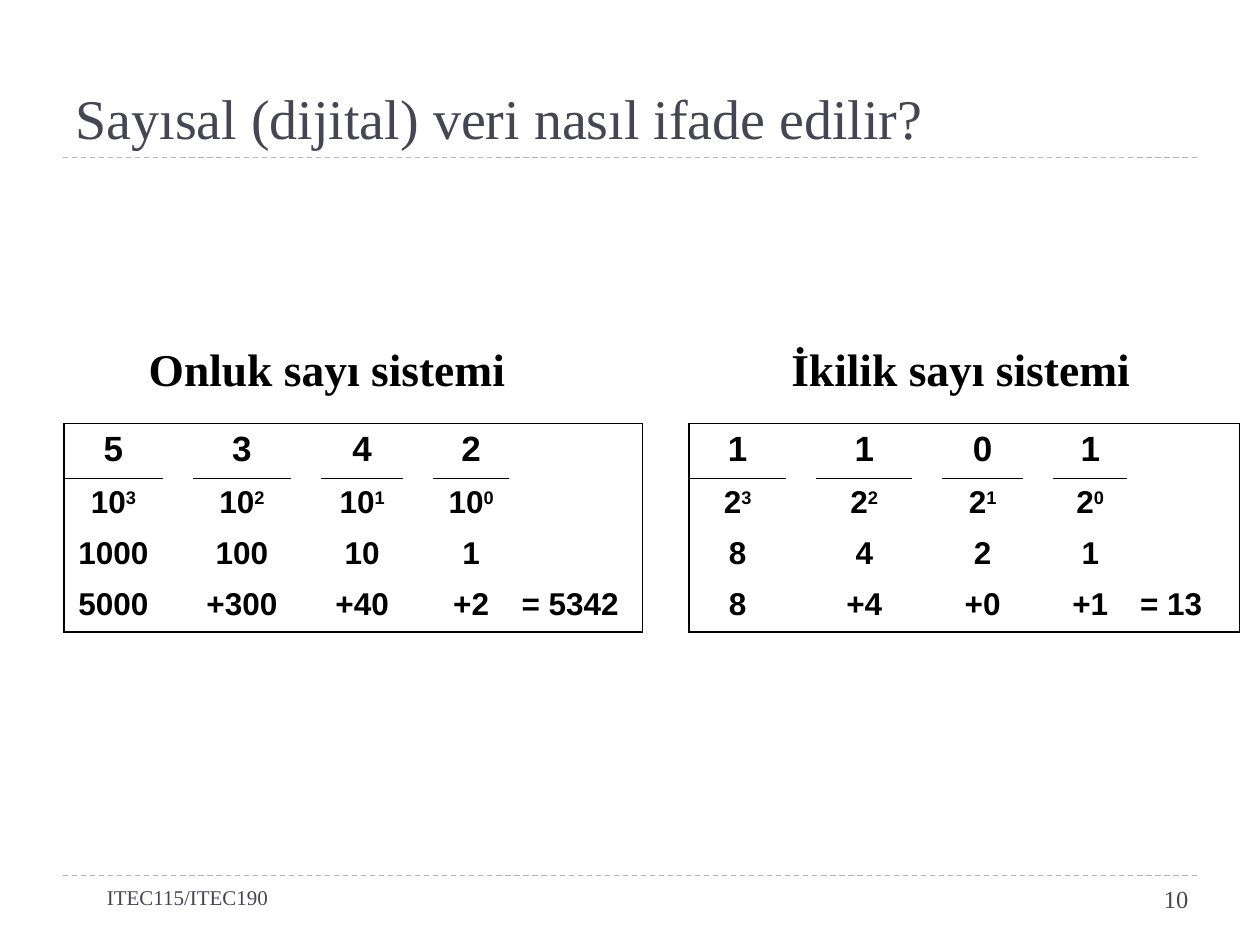
from dataclasses import dataclass

from lxml.etree import SubElement
from pptx import Presentation
from pptx.dml.color import RGBColor
from pptx.enum.dml import MSO_LINE_DASH_STYLE as Dash
from pptx.enum.shapes import MSO_CONNECTOR as Connector
from pptx.enum.text import MSO_ANCHOR as Anchor, PP_ALIGN as Align
from pptx.oxml import parse_xml
from pptx.oxml.ns import nsdecls, qn
from pptx.util import Inches, Pt

INK = "000000"
SLATE = "464653"
RULE = "9FB8CD"
SERIF = "Times New Roman"
NO_GRID_STYLE = "{2D5ABB26-0587-4C30-8999-92F81FD0307C}"
ROW_HEIGHTS = (0.44, 0.4, 0.4, 0.4)


@dataclass
class NumberSystem:
    heading: str
    heading_left: float
    left: float
    base: int
    digits: str
    column_widths: tuple[float, ...]


@dataclass
class Label:
    text: str
    left: float
    width: float
    size: int
    align: Align


SYSTEMS = (
    NumberSystem("Onluk sayı sistemi", 1.08, 0.51, 10, "5342",
                 (0.78, 0.24, 0.78, 0.24, 0.65, 0.24, 0.6, 1.06)),
    NumberSystem("İkilik sayı sistemi", 6.18, 5.47, 2, "1101",
                 (0.77, 0.24, 0.76, 0.24, 0.64, 0.23, 0.59, 0.89)),
)
FOOTERS = (
    Label("ITEC115/ITEC190", 0.75, 8, 12, Align.LEFT),
    Label("10", 9.02, 0.51, 14, Align.RIGHT),
)


def color(value: str) -> RGBColor:
    return RGBColor.from_string(value)


def apply(target, formats: dict) -> None:
    for attribute, value in formats.items():
        setattr(target, attribute, value)


def write(paragraph, text: str, size: int, ink: str, face: str = SERIF, bold: bool = False):
    run = paragraph.add_run()
    run.text = text
    apply(run.font, {"size": Pt(size), "name": face, "bold": bold})
    run.font.color.rgb = color(ink)
    return run


def place(shape, left: float, top: float, width: float, height: float) -> None:
    apply(shape, {"left": Inches(left), "top": Inches(top),
                  "width": Inches(width), "height": Inches(height)})


def draw_rule(slide, top: float) -> None:
    rule = slide.shapes.add_connector(
        Connector.STRAIGHT, Inches(0.5), Inches(top), Inches(9.5), Inches(top))
    apply(rule.line, {"width": Pt(0.75), "dash_style": Dash.DASH})
    rule.line.color.rgb = color(RULE)
    SubElement(rule._element.spPr, qn("a:effectLst"))


def draw_label(slide, label: Label) -> None:
    box = slide.shapes.add_textbox(
        Inches(label.left), Inches(6.97), Inches(label.width), Inches(0.4))
    box.text_frame.word_wrap = True
    paragraph = box.text_frame.paragraphs[0]
    paragraph.alignment = label.align
    write(paragraph, label.text, label.size, SLATE)


def set_borders(cell, shown_sides: str) -> None:
    properties = cell._tc.get_or_add_tcPr()
    solid = f'<a:solidFill><a:srgbClr val="{INK}"/></a:solidFill>'
    for position, side in enumerate("LRTB"):
        fill = solid if side in shown_sides else "<a:noFill/>"
        properties.insert(position, parse_xml(
            f'<a:ln{side} {nsdecls("a")} w="12700">{fill}</a:ln{side}>'))


def border_sides(row: int, column: int, last_row: int, last_column: int) -> str:
    is_digit = column % 2 == 0
    rules = {
        "L": column == 0,
        "R": column == last_column,
        "T": row == 0 or (row == 1 and is_digit),
        "B": row == last_row or (row == 0 and is_digit),
    }
    return "".join(side for side, shown in rules.items() if shown)


def write_cell(cell, text: str, size: int, align: Align, exponent: str = "") -> None:
    paragraph = cell.text_frame.paragraphs[0]
    paragraph.alignment = align
    write(paragraph, text, size, INK, "Arial", True)
    if exponent:
        power = write(paragraph, exponent, size, INK, "Arial", True)
        power.font._element.set("baseline", "30000")


def draw_system(slide, system: NumberSystem) -> None:
    widths = system.column_widths
    table = slide.shapes.add_table(
        len(ROW_HEIGHTS), len(widths), Inches(system.left), Inches(3.36),
        Inches(sum(widths)), Inches(sum(ROW_HEIGHTS))).table
    apply(table, {"first_row": False, "horz_banding": False})
    table._tbl.tblPr.find(qn("a:tableStyleId")).text = NO_GRID_STYLE
    for column, width in zip(table.columns, widths):
        column.width = Inches(width)
    for row, height in zip(table.rows, ROW_HEIGHTS):
        row.height = Inches(height)

    last_row, last_column = len(ROW_HEIGHTS) - 1, len(widths) - 1
    for row in range(last_row + 1):
        for column in range(last_column + 1):
            cell = table.cell(row, column)
            cell.fill.background()
            set_borders(cell, border_sides(row, column, last_row, last_column))

    total = 0
    for index, digit in enumerate(system.digits):
        exponent = len(system.digits) - 1 - index
        weight = system.base ** exponent
        product = int(digit) * weight
        total += product
        column = 2 * index
        sign = "+" if index else ""
        write_cell(table.cell(0, column), digit, 20, Align.CENTER)
        write_cell(table.cell(1, column), str(system.base), 18, Align.CENTER, str(exponent))
        write_cell(table.cell(2, column), str(weight), 18, Align.CENTER)
        write_cell(table.cell(3, column), f"{sign}{product}", 18, Align.CENTER)
    write_cell(table.cell(last_row, last_column), f"= {total}", 18, Align.LEFT)


def fill_title(title) -> None:
    place(title, 0.5, 0.17, 9, 1.08)
    title.text_frame.vertical_anchor = Anchor.BOTTOM
    paragraph = title.text_frame.paragraphs[0]
    paragraph.alignment = Align.LEFT
    write(paragraph, "Sayısal (dijital) veri nasıl ifade edilir?", 32, SLATE)


def fill_heading(body, system: NumberSystem) -> None:
    place(body, system.heading_left, 2.66, 3.6, 0.6)
    body.text_frame.vertical_anchor = Anchor.TOP
    paragraph = body.text_frame.paragraphs[0]
    paragraph.space_before = Pt(0)
    properties = paragraph._p.get_or_add_pPr()
    properties.set("marL", "0")
    properties.set("indent", "0")
    SubElement(properties, qn("a:buNone"))
    write(paragraph, system.heading, 26, INK, bold=True)


def main() -> None:
    presentation = Presentation()
    apply(presentation, {"slide_width": Inches(10), "slide_height": Inches(7.5)})
    slide = presentation.slides.add_slide(presentation.slide_layouts[3])
    fill_title(slide.shapes.title)
    for top in (6.95, 1.25):
        draw_rule(slide, top)
    for index, system in enumerate(SYSTEMS, start=1):
        fill_heading(slide.placeholders[index], system)
        draw_system(slide, system)
    for label in FOOTERS:
        draw_label(slide, label)
    presentation.save("out.pptx")


if __name__ == "__main__":
    main()
